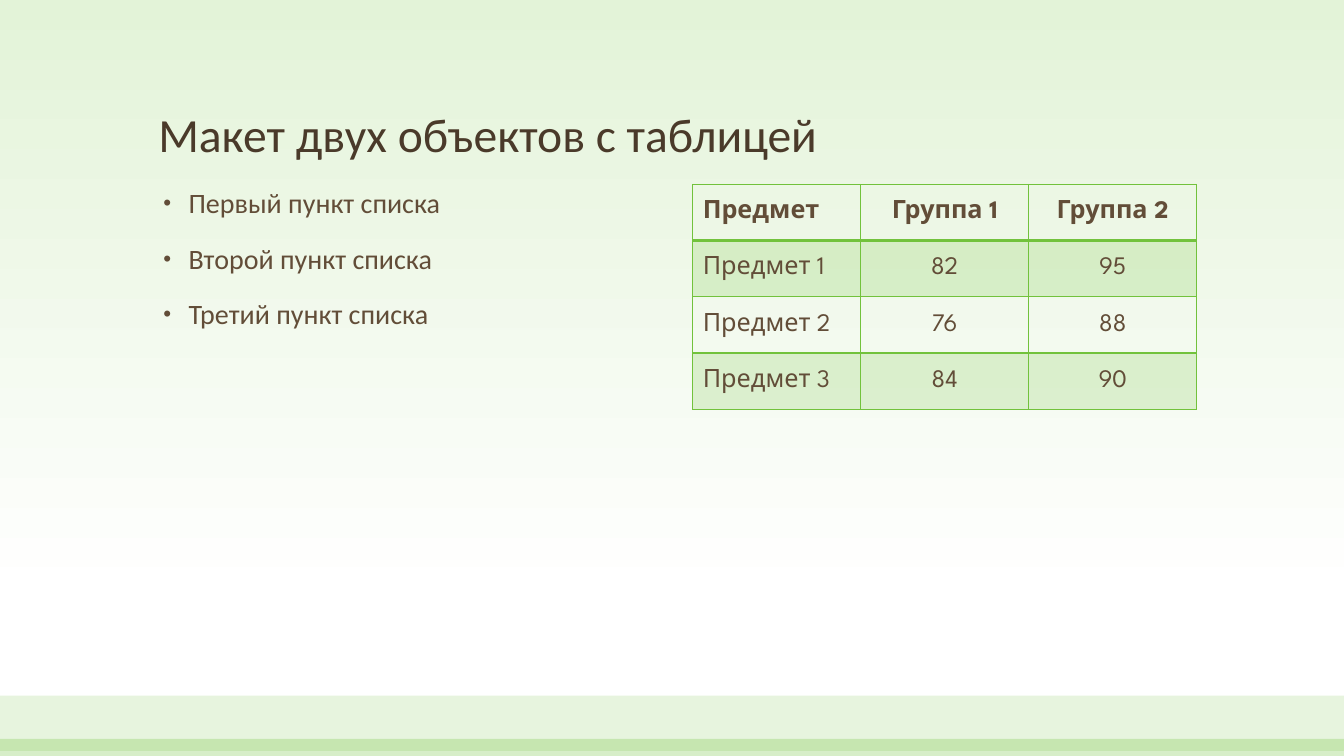
from lxml.etree import SubElement
from pptx import Presentation
from pptx.dml.color import RGBColor
from pptx.enum.shapes import MSO_SHAPE
from pptx.enum.text import MSO_ANCHOR, PP_ALIGN
from pptx.oxml.ns import qn
from pptx.util import Inches, Pt

GREEN, BROWN, DARK_BROWN = "72C23C", "624D38", "4A3A2A"
ITEMS = ["Первый пункт списка", "Второй пункт списка", "Третий пункт списка"]
ROWS = [
    ["Предмет", "Группа 1", "Группа 2"],
    ["Предмет 1", "82", "95"],
    ["Предмет 2", "76", "88"],
    ["Предмет 3", "84", "90"],
]


def rgb(color):
    return RGBColor.from_string(color)


def place(sp, box):
    sp.left, sp.top, sp.width, sp.height = [Inches(v) for v in box]


def add_run(p, text, size, font, color, bold=False):
    r = p.add_run()
    r.text = text
    r.font.size = Pt(size)
    r.font.name = font
    r.font.bold = bold
    r.font.color.rgb = rgb(color)


def fill_tint(fill, color, percent):
    fill.solid()
    fill.fore_color.rgb = rgb(color)
    clr = fill._xPr.find(qn("a:solidFill"))[0]
    SubElement(clr, qn("a:alpha"), val=str(percent * 1000))


def add_background(s):
    fill = s.background.fill
    fill.gradient()
    fill.gradient_angle = 270
    for stop, color, pos in zip(fill.gradient_stops, ["E3F3D8", "FFFFFF"], [0, 0.79]):
        stop.color.rgb = rgb(color)
        stop.position = pos


def add_band(s, box, percent):
    sp = s.shapes.add_shape(MSO_SHAPE.RECTANGLE, *[Inches(v) for v in box])
    sp.shadow.inherit = False
    sp.line.fill.background()
    fill_tint(sp.fill, GREEN, percent)


def add_title(s, box, text):
    sp = s.shapes.title
    place(sp, box)
    tf = sp.text_frame
    tf.vertical_anchor = MSO_ANCHOR.BOTTOM
    p = tf.paragraphs[0]
    p.alignment = PP_ALIGN.LEFT
    p.line_spacing = 0.9
    add_run(p, text, 34, "Calibri", DARK_BROWN)


def add_list(s, box, items):
    sp = s.placeholders[1]
    place(sp, box)
    tf = sp.text_frame
    for i, item in enumerate(items):
        p = tf.paragraphs[0] if i == 0 else tf.add_paragraph()
        p.line_spacing = 0.9
        p.space_before = Pt(18)
        pPr = p._p.get_or_add_pPr()
        pPr.set("marL", str(Inches(0.3)))
        pPr.set("indent", str(Inches(-0.25)))
        SubElement(pPr, qn("a:buSzPct"), val="80000")
        SubElement(pPr, qn("a:buFont"), typeface="Arial")
        SubElement(pPr, qn("a:buChar"), char="•")
        add_run(p, item, 20, "Calibri", BROWN)


def set_borders(cell, widths):
    tcPr = cell._tc.get_or_add_tcPr()
    for side, width in widths.items():
        ln = SubElement(tcPr, qn(f"a:ln{side}"), w=str(Pt(width)))
        SubElement(SubElement(ln, qn("a:solidFill")), qn("a:srgbClr"), val=GREEN)


def add_score_table(s, box, rows):
    tbl = s.shapes.add_table(len(rows), len(rows[0]), *[Inches(v) for v in box]).table
    for i, row in enumerate(rows):
        for j, text in enumerate(row):
            cell = tbl.cell(i, j)
            cell.vertical_anchor = MSO_ANCHOR.MIDDLE
            top, bottom = 2 if i == 1 else 1, 2 if i == 0 else 1
            set_borders(cell, {"L": 1, "R": 1, "T": top, "B": bottom})
            if i % 2:
                fill_tint(cell.fill, GREEN, 20)
            else:
                cell.fill.background()
            p = cell.text_frame.paragraphs[0]
            p.alignment = PP_ALIGN.CENTER if j else PP_ALIGN.LEFT
            add_run(p, text, 18, "League Spartan", BROWN, bold=i == 0)


def main():
    prs = Presentation()
    prs.slide_width, prs.slide_height = Inches(13.33), Inches(7.5)
    s = prs.slides.add_slide(prs.slide_layouts[1])
    add_background(s)
    add_band(s, (0, 6.9, 13.33, 0.55), 17)
    add_band(s, (0, 7.33, 13.33, 0.17), 28)
    add_title(s, (1.47, 0.48, 10.4, 1.19), "Макет двух объектов с таблицей")
    add_list(s, (1.47, 1.83, 5, 4.75), ITEMS)
    add_score_table(s, (6.87, 1.83, 5, 2.23), ROWS)
    prs.save("out.pptx")


if __name__ == "__main__":
    main()
